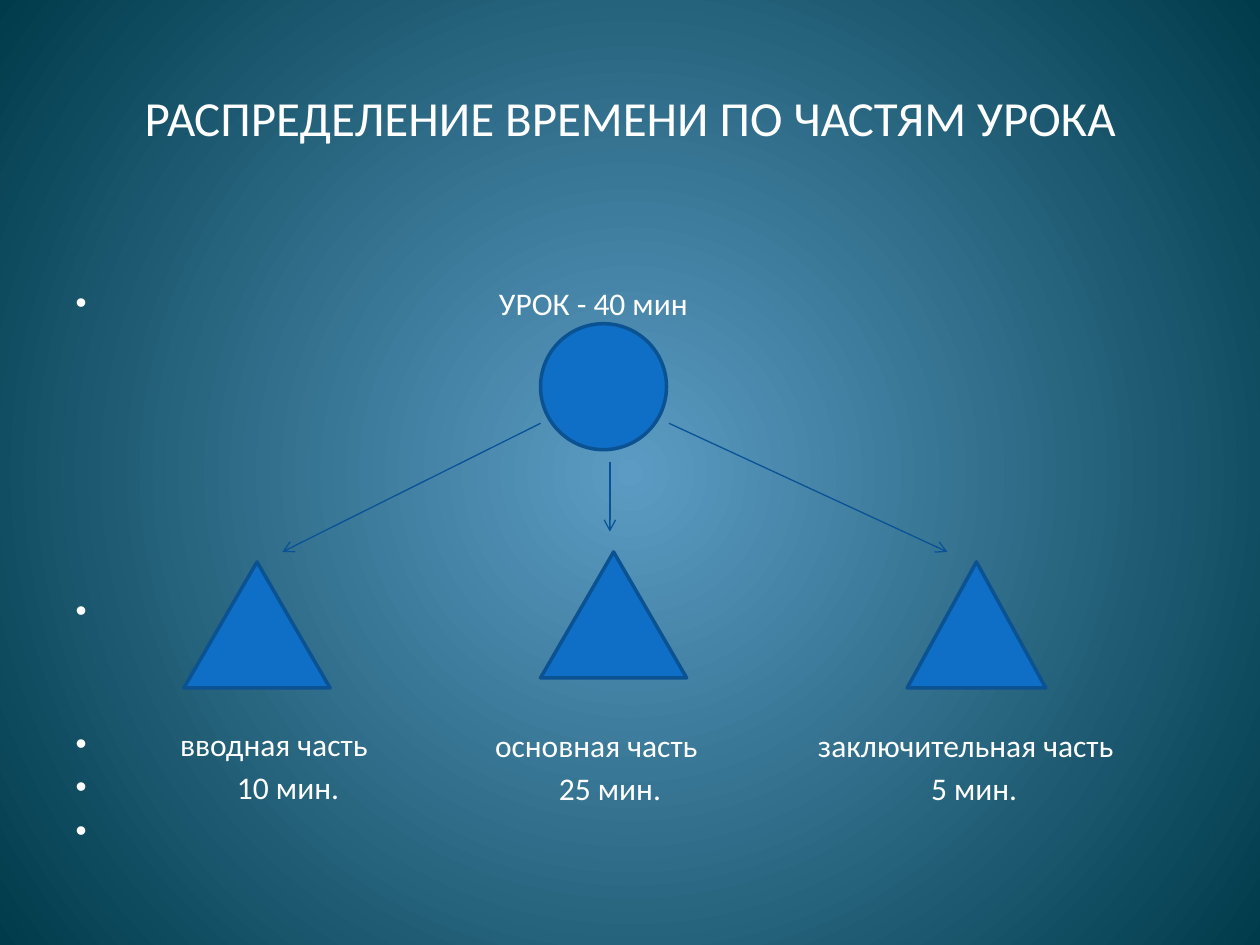
import pptx
import pptx.util
import pptx.dml.color
import pptx.enum.shapes
import pptx.enum.text
import pptx.oxml.ns
from lxml import etree

Pt = pptx.util.Pt
RGB = pptx.dml.color.RGBColor
MSO = pptx.enum.shapes.MSO_SHAPE
ALIGN = pptx.enum.text.PP_ALIGN
qn = pptx.oxml.ns.qn

WHITE = RGB(0xFF, 0xFF, 0xFF)
GLOW = RGB(0x5C, 0x9C, 0xC4)
DARK = RGB(0x00, 0x3B, 0x4B)
BLUE = RGB(0x0F, 0x6F, 0xC6)
EDGE = RGB(0x0B, 0x52, 0x92)
ARROW = RGB(0x09, 0x52, 0x95)

# Content, lengths in points
TITLE = "РАСПРЕДЕЛЕНИЕ ВРЕМЕНИ ПО ЧАСТЯМ УРОКА"
GAP = 3.2
LIST = [  # text, indent, space before
    ("УРОК - 40 мин", 241.9, 0),
    (" ", 27, 154),
    ("вводная часть", 59.7, 54.5),
    ("10 мин.", 92.2, GAP),
    (" ", 27, GAP),
]
PARTS = [  # left, width, name, time, indent of time
    (282.9, 130, "основная часть", "25 мин.", 36.5),
    (467.4, 190, "заключительная часть", "5 мин.", 64.6),
]
PARTS_TOP = 414.8
SHAPES = [  # kind, left, top, width, height
    (MSO.OVAL, 308.9, 185, 72, 72),
    (MSO.ISOSCELES_TRIANGLE, 105.1, 321.1, 83.5, 72),
    (MSO.ISOSCELES_TRIANGLE, 308.9, 315.4, 83.5, 72),
    (MSO.ISOSCELES_TRIANGLE, 518.4, 321.1, 79.2, 72),
]
ARROWS = [  # from x, y, to x, y
    (348.5, 264.2, 348.5, 303.8),
    (308.9, 241.9, 161.3, 315.4),
    (382.3, 241.9, 541.4, 315.4),
]


def write(para, text, size=18, align=ALIGN.LEFT, before=0, left=0, hang=0):
    run = para.add_run()
    run.text = text
    font = run.font
    font.name, font.size = "Calibri", Pt(size)
    font.color.rgb = WHITE
    para.alignment = align
    para.space_before = Pt(before)
    props = para._p.get_or_add_pPr()
    props.set("marL", str(Pt(left)))
    props.set("indent", str(Pt(-hang)))


def place(shape, *box):
    shape.left, shape.top, shape.width, shape.height = map(Pt, box)


def rows(frame):
    """Yield the first paragraph, then new ones."""
    yield frame.paragraphs[0]
    while True:
        yield frame.add_paragraph()


deck = pptx.Presentation()
deck.slide_width, deck.slide_height = Pt(720), Pt(540)
slide = deck.slides.add_slide(deck.slide_layouts[1])
shapes = slide.shapes

# Radial background
fill = slide.background.fill
fill.gradient()
for stop, color in zip(fill.gradient_stops, (GLOW, DARK)):
    stop.color.rgb = color
grad = slide.element.find(".//" + qn("a:gradFill"))
grad.remove(grad.find(qn("a:lin")))
ring = etree.SubElement(grad, qn("a:path"), path="circle")
etree.SubElement(ring, qn("a:fillToRect"), {side: "50000" for side in "ltrb"})

# Title
title = shapes.title
place(title, 36, 21.6, 648, 90)
write(title.text_frame.paragraphs[0], TITLE, size=28, align=ALIGN.CENTER)

# Bulleted list with the lesson and its first part
body = slide.placeholders[1]
place(body, 36, 126, 648, 356.4)
frame = body.text_frame
frame.auto_size = pptx.enum.text.MSO_AUTO_SIZE.NONE
frame.margin_top = Pt(36.3)
for (text, left, before), para in zip(LIST, rows(frame)):
    write(para, text, before=before, left=left, hang=left)

# Other parts, level with the first
for left, width, name, time, shift in PARTS:
    box = shapes.add_textbox(Pt(left), Pt(PARTS_TOP), Pt(width), Pt(48))
    frame = box.text_frame
    frame.word_wrap = True
    frame.margin_left = frame.margin_right = 0
    frame.margin_top = frame.margin_bottom = 0
    lines = rows(frame)
    write(next(lines), name)
    write(next(lines), time, before=GAP, left=shift)

# Circle and triangles
for kind, *box in SHAPES:
    shape = shapes.add_shape(kind, *map(Pt, box))
    shape.shadow.inherit = False
    shape.fill.solid()
    shape.fill.fore_color.rgb = BLUE
    shape.line.color.rgb = EDGE
    shape.line.width = Pt(2)

# Arrows
for ends in ARROWS:
    link = shapes.add_connector(
        pptx.enum.shapes.MSO_CONNECTOR.STRAIGHT, *map(Pt, ends))
    link.line.color.rgb = ARROW
    link.line.width = Pt(0.75)
    props = link._element.spPr
    etree.SubElement(props.find(qn("a:ln")), qn("a:tailEnd"), type="arrow")
    etree.SubElement(props, qn("a:effectLst"))

deck.save("out.pptx")
